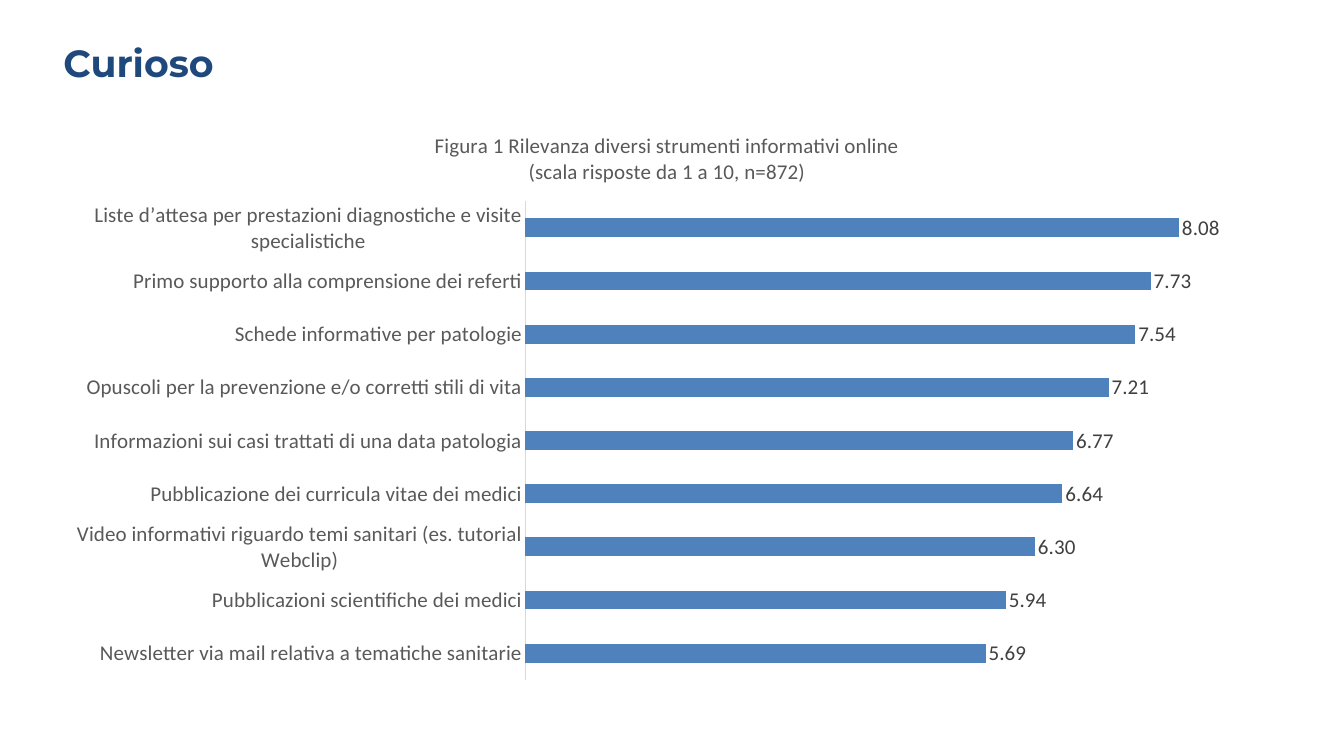
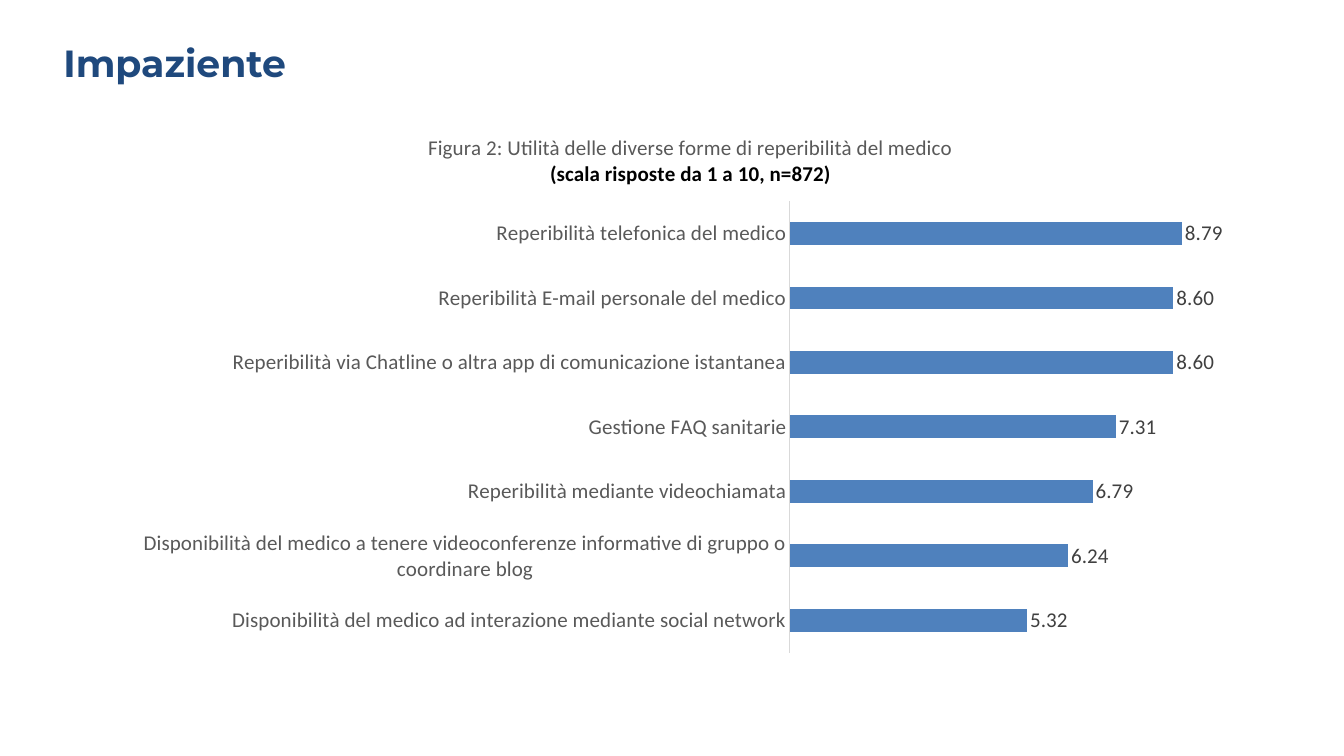
from lxml.etree import SubElement
from pptx import Presentation
from pptx.chart.data import CategoryChartData
from pptx.dml.color import RGBColor
from pptx.enum.chart import XL_CHART_TYPE, XL_LABEL_POSITION as LABEL_POS, XL_TICK_MARK as TICK
from pptx.enum.text import MSO_AUTO_SIZE
from pptx.oxml.ns import qn
from pptx.util import Emu, Pt

COLORS = {"title": "1F497D", "bar": "4F81BD", "text": "595959",
          "label": "404040", "axis": "D9D9D9", "black": "000000"}
TITLE_FONT, CHART_FONT = "Montserrat", "Calibri"
CHART_SIZE = 20
NUMBER_FORMAT = "###0.00"
PX = 12095  # EMU per px
SLIDE_SIZE = (1344, 756)
TITLE_BOX = (56, 36, 659, 54)

# Bars run from top to bottom; a caption line is (text, colour, bold);
# plot is the inner plot area as fractions of the chart.
SLIDES = [
    {
        "title": "Curioso",
        "caption": [("Figura 1 Rilevanza diversi strumenti informativi online", "text", False),
                    ("(scala risposte da 1 a 10, n=872)", "text", False)],
        "box": (56, 113, 1222, 593),
        "plot": (0.384, 0.149, 0.596, 0.807),
        "axis_max": 9,
        "bars": [
            ("Liste d’attesa per prestazioni diagnostiche e visite specialistiche", 8.08),
            ("Primo supporto alla comprensione dei referti", 7.73),
            ("Schede informative per patologie", 7.54),
            ("Opuscoli per la prevenzione e/o corretti stili di vita", 7.21),
            ("Informazioni sui casi trattati di una data patologia", 6.77),
            ("Pubblicazione dei curricula vitae dei medici", 6.64),
            ("Video informativi riguardo temi sanitari (es. tutorial Webclip)", 6.30),
            ("Pubblicazioni scientifiche dei medici", 5.94),
            ("Newsletter via mail relativa a tematiche sanitarie", 5.69),
        ],
    },
    {
        "title": "Impaziente",
        "caption": [("Figura 2: Utilità delle diverse forme di reperibilità del medico", "text", False),
                    ("(scala risposte da 1 a 10, n=872)", "black", True)],
        "box": (121, 116, 1139, 547),
        "plot": (0.587, 0.156, 0.392, 0.825),
        "axis_max": 10,
        "bars": [
            ("Reperibilità telefonica del medico", 8.79),
            ("Reperibilità E-mail personale del medico", 8.60),
            ("Reperibilità via Chatline o altra app di comunicazione istantanea", 8.60),
            ("Gestione FAQ sanitarie", 7.31),
            ("Reperibilità mediante videochiamata", 6.79),
            ("Disponibilità del medico a tenere videoconferenze informative di gruppo o coordinare blog", 6.24),
            ("Disponibilità del medico ad interazione mediante social network", 5.32),
        ],
    },
]


def emu(lengths):
    return [Emu(n * PX) for n in lengths]


def rgb(name):
    return RGBColor.from_string(COLORS[name])


def style_font(font, name, size, color, bold=False):
    font.name, font.size, font.bold = name, Pt(size), bold
    font.color.rgb = rgb(color)


def add_title(s, text):
    tf = s.shapes.add_textbox(*emu(TITLE_BOX)).text_frame
    tf.word_wrap = True
    tf.auto_size = MSO_AUTO_SIZE.SHAPE_TO_FIT_TEXT
    tf.text = text
    style_font(tf.paragraphs[0].runs[0].font, TITLE_FONT, 36, "title", True)


def add_caption(chart, lines):
    tf = chart.chart_title.text_frame
    tf.text = "\n".join(text for text, _, _ in lines)
    for p, (_, color, bold) in zip(tf.paragraphs, lines):
        style_font(p.runs[0].font, CHART_FONT, CHART_SIZE, color, bold)
    chart.chart_title.include_in_layout = False


def place_plot(chart, plot):
    """Fix the inner plot area at (x, y, w, h), given as fractions of the chart."""
    area = chart._chartSpace.chart.plotArea
    for old in area.findall(qn("c:layout")):
        area.remove(old)
    layout = SubElement(area, qn("c:layout"))
    area.insert(0, layout)
    manual = SubElement(layout, qn("c:manualLayout"))
    settings = [("layoutTarget", "inner"), ("xMode", "edge"), ("yMode", "edge"),
                *zip("xywh", plot)]
    for tag, value in settings:
        SubElement(manual, qn(f"c:{tag}")).set("val", str(value))


def add_bar_chart(s, content):
    data = CategoryChartData(number_format=NUMBER_FORMAT)
    names, values = zip(*reversed(content["bars"]))
    data.categories = names
    data.add_series("Series 1", values)
    chart = s.shapes.add_chart(XL_CHART_TYPE.BAR_CLUSTERED, *emu(content["box"]), data).chart
    style_font(chart.font, CHART_FONT, 10, "black")
    chart.has_legend = False
    add_caption(chart, content["caption"])
    place_plot(chart, content["plot"])

    cat_axis, val_axis = chart.category_axis, chart.value_axis
    cat_axis.major_tick_mark = cat_axis.minor_tick_mark = TICK.NONE
    cat_axis.format.line.color.rgb = rgb("axis")
    cat_axis.format.line.width = Pt(0.75)
    style_font(cat_axis.tick_labels.font, CHART_FONT, CHART_SIZE, "text")
    val_axis.minimum_scale, val_axis.maximum_scale = 0, content["axis_max"]
    val_axis.has_major_gridlines = False
    val_axis.visible = False

    plot = chart.plots[0]
    plot.gap_width = 182
    plot.vary_by_categories = False
    fill = plot.series[0].format.fill
    fill.solid()
    fill.fore_color.rgb = rgb("bar")
    labels = plot.series[0].data_labels
    labels.show_value = True
    labels.position = LABEL_POS.OUTSIDE_END
    labels.number_format = NUMBER_FORMAT
    labels.number_format_is_linked = False
    style_font(labels.font, CHART_FONT, CHART_SIZE, "label")


def main():
    prs = Presentation()
    prs.slide_width, prs.slide_height = emu(SLIDE_SIZE)
    for content in SLIDES:
        s = prs.slides.add_slide(prs.slide_layouts[6])
        add_title(s, content["title"])
        add_bar_chart(s, content)
    prs.save("out.pptx")


if __name__ == "__main__":
    main()
